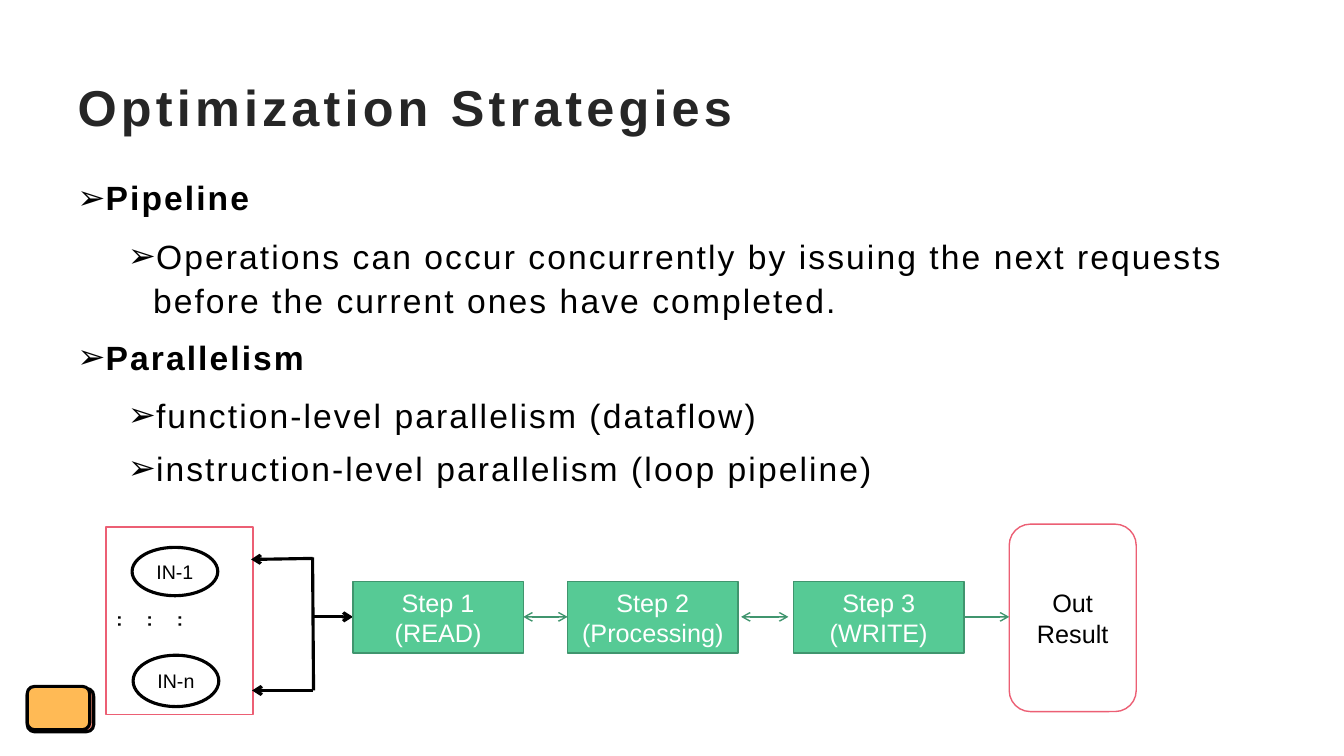
import pptx
import pptx.util
import pptx.dml.color
import pptx.enum.shapes
import pptx.enum.text
import pptx.oxml.ns
from lxml import etree

Inches = pptx.util.Inches
Pt = pptx.util.Pt
RGB = pptx.dml.color.RGBColor
KIND = pptx.enum.shapes.MSO_SHAPE
ALIGN = pptx.enum.text.PP_ALIGN
ANCHOR = pptx.enum.text.MSO_ANCHOR
qn = pptx.oxml.ns.qn

BLACK = RGB(0x00, 0x00, 0x00)
WHITE = RGB(0xFF, 0xFF, 0xFF)
INK = RGB(0x26, 0x26, 0x26)
RED = RGB(0xEC, 0x5F, 0x74)
GREEN = RGB(0x56, 0xCA, 0x95)
MOSS = RGB(0x40, 0x95, 0x6E)
CORAL = RGB(0xF1, 0x88, 0x70)
AMBER = RGB(0xFF, 0xBA, 0x55)

THICK, THIN = 2.25, 1
MID = 6.12  # height of the flow's axis
FORK = 3.1  # where the input branches meet

# level, text
POINTS = [
    (0, "Pipeline"),
    (1, "Operations can occur concurrently by issuing the next requests "
        "before the current ones have completed."),
    (0, "Parallelism"),
    (1, "function-level parallelism (dataflow)"),
    (1, "instruction-level parallelism (loop pipeline)"),
]
STEPS = [
    (3.5, ["Step 1", "(READ)"]),
    (5.63, ["Step 2", "(Processing)"]),
    (7.87, ["Step 3", "(WRITE)"]),
]
# from x, from y, to x, to y, arrow at end
BRANCHES = [
    (FORK, 5.54, 2.49, 5.55, True),
    (FORK, 6.85, 2.5, 6.85, True),
    (FORK, 5.53, FORK + 0.01, 6.85, False),
    (FORK, MID, 3.5, MID, True),
]
# from x, to x, arrow at start
LINKS = [(9.56, 10.01, False), (5.19, 5.63, True), (7.82, 7.35, True)]


def add_run(para, text, size, color, bold=False, space=0):
    run = para.add_run()
    run.text = text
    font = run.font
    font.name, font.size, font.bold = "Arial", Pt(size), bold
    font.color.rgb = color
    if space:
        run._r.get_or_add_rPr().set("spc", str(int(space * 100)))


def add_title(slide, text):
    title = slide.shapes.title
    title.left, title.top = Inches(0.67), Inches(0.67)
    title.width, title.height = Inches(12), Inches(0.77)
    title.text_frame.vertical_anchor = ANCHOR.MIDDLE
    para = title.text_frame.paragraphs[0]
    para.alignment = ALIGN.LEFT
    add_run(para, text, 36, INK, True, 3)


def set_bullet(para, left):
    props = para._p.get_or_add_pPr()
    props.set("marL", str(Inches(left)))
    props.set("indent", str(Inches(-0.25)))
    etree.SubElement(props, qn("a:buFont")).set("typeface", "Arial")
    etree.SubElement(props, qn("a:buChar")).set("char", "➢")


def add_points(slide):
    box = slide.shapes.add_textbox(
        Inches(0.67), Inches(1.63), Inches(12), Inches(5.62))
    frame = box.text_frame
    frame.word_wrap = True
    for i, (level, text) in enumerate(POINTS):
        para = frame.add_paragraph() if i else frame.paragraphs[0]
        para.level = level
        para.line_spacing = 1.1 if level else 1.2
        para.space_after = Pt(6 if level else 10)
        set_bullet(para, 0.25 + 0.5 * level)
        add_run(para, text, 24, BLACK, level == 0, 1.5)


def add_box(slide, kind, x, y, w, h, fill, line, width,
            lines=(), size=18, color=BLACK):
    box = slide.shapes.add_shape(
        kind, Inches(x), Inches(y), Inches(w), Inches(h))
    box.shadow.inherit = False
    box.fill.solid()
    box.fill.fore_color.rgb = fill
    box.line.color.rgb = line
    box.line.width = Pt(width)
    frame = box.text_frame
    frame.vertical_anchor = ANCHOR.MIDDLE
    for i, text in enumerate(lines):
        para = frame.add_paragraph() if i else frame.paragraphs[0]
        para.alignment = ALIGN.CENTER
        add_run(para, text, size, color)


def add_line(slide, x1, y1, x2, y2, color, width, head=False, tail=False):
    line = slide.shapes.add_connector(
        pptx.enum.shapes.MSO_CONNECTOR.STRAIGHT,
        Inches(x1), Inches(y1), Inches(x2), Inches(y2))
    line.line.color.rgb = color
    line.line.width = Pt(width)
    for tag, shown in (("a:headEnd", head), ("a:tailEnd", tail)):
        if shown:
            end = etree.SubElement(line.line._get_or_add_ln(), qn(tag))
            end.set("type", "arrow")
    etree.SubElement(line._element.spPr, qn("a:effectLst"))


def add_dots(slide):
    box = slide.shapes.add_textbox(
        Inches(1.26), Inches(6), Inches(0.81), Inches(0.4))
    frame = box.text_frame
    frame.word_wrap = True
    frame.auto_size = pptx.enum.text.MSO_AUTO_SIZE.SHAPE_TO_FIT_TEXT
    frame._txBody.bodyPr.set("vert", "eaVert")
    add_run(frame.paragraphs[0], "......", 18, BLACK)


def add_inputs(slide):
    add_box(slide, KIND.RECTANGLE, 1.05, 5.23, 1.46, 1.86, WHITE, RED, THIN)
    for x, y, h, name in ((1.31, 5.43, 0.48, "IN-1"),
                          (1.32, 6.5, 0.51, "IN-n")):
        add_box(slide, KIND.OVAL, x, y, 0.85, h, WHITE, BLACK, THICK,
                [name], 14)
    add_dots(slide)
    for x1, y1, x2, y2, tail in BRANCHES:
        add_line(slide, x1, y1, x2, y2, BLACK, THICK, tail=tail)


def add_flow(slide):
    add_box(slide, KIND.ROUNDED_RECTANGLE, 10.01, 5.2, 1.26, 1.86,
            WHITE, RED, THIN, ["Out Result"])
    for x, lines in STEPS:
        add_box(slide, KIND.FLOWCHART_PROCESS, x, 5.77, 1.69, 0.71,
                GREEN, MOSS, THIN, lines, color=WHITE)
    for x1, x2, head in LINKS:
        add_line(slide, x1, MID, x2, MID, MOSS, THIN, head, True)


def add_badge(slide):
    for y, w, fill in ((6.83, 0.66, CORAL), (6.81, 0.62, AMBER)):
        add_box(slide, KIND.ROUNDED_RECTANGLE, 0.27, y, w, 0.43,
                fill, BLACK, THICK)


def main():
    deck = pptx.Presentation()
    deck.slide_width, deck.slide_height = Inches(13.33), Inches(7.5)
    slide = deck.slides.add_slide(deck.slide_layouts[5])
    add_title(slide, "Optimization Strategies")
    add_points(slide)
    add_inputs(slide)
    add_flow(slide)
    add_badge(slide)
    deck.save("out.pptx")


if __name__ == "__main__":
    main()
